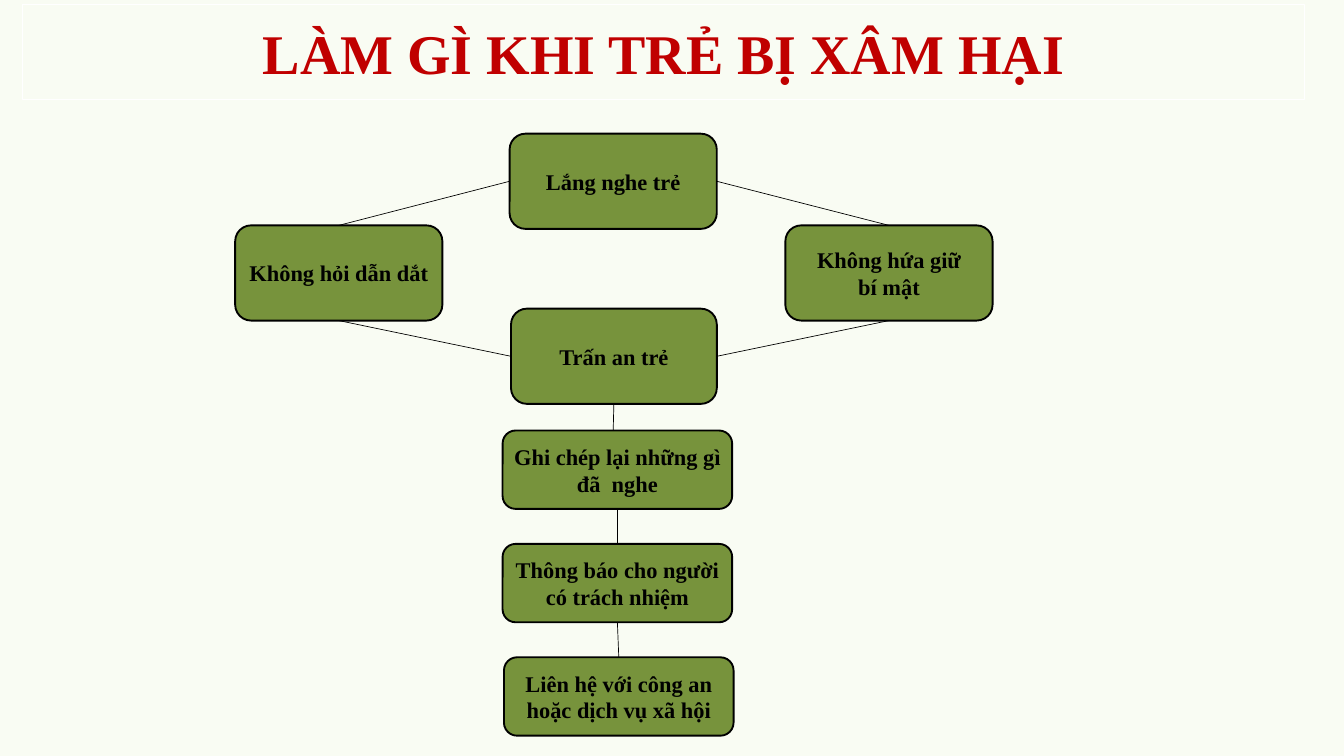
from pptx import Presentation
from pptx.dml.color import RGBColor
from pptx.enum.shapes import MSO_CONNECTOR as Connector, MSO_SHAPE as Shape
from pptx.enum.text import MSO_ANCHOR as Anchor, PP_ALIGN as Align
from pptx.oxml.ns import qn
from pptx.util import Pt
from lxml.etree import SubElement

PX = 9525
FONT = "Times New Roman"
CREAM = RGBColor(0xF9, 0xFC, 0xF3)
GREEN = RGBColor(0x77, 0x93, 0x3C)
RED = RGBColor(0xC0, 0x00, 0x00)
BLACK = RGBColor(0, 0, 0)
WHITE = RGBColor(0xFF, 0xFF, 0xFF)
TOP, LEFT, BOTTOM, RIGHT = range(4)


def add_box(slide, kind, box, text, size, color, fill, line, weight):
    """Add an outlined shape with centred bold text."""
    shape = slide.shapes.add_shape(kind, *(value * PX for value in box))
    shape.shadow.inherit = False
    if fill is None:
        shape.fill.background()
    else:
        shape.fill.solid()
        shape.fill.fore_color.rgb = fill
    shape.line.color.rgb = line
    shape.line.width = Pt(weight)
    frame = shape.text_frame
    frame.word_wrap = True
    frame.vertical_anchor = Anchor.MIDDLE
    frame.text = text
    for paragraph in frame.paragraphs:
        paragraph.alignment = Align.CENTER
        for run in paragraph.runs:
            run.font.name = FONT
            run.font.size = Pt(size)
            run.font.bold = True
            run.font.color.rgb = color
    return shape


def add_step(slide, box, text):
    """Add one green rounded step."""
    return add_box(slide, Shape.ROUNDED_RECTANGLE, box, text, 24, BLACK, GREEN, BLACK, 2)


def add_link(slide, start, start_side, end, end_side):
    """Join the sides of two steps with a thin line."""
    link = slide.shapes.add_connector(Connector.STRAIGHT, 0, 0, 0, 0)
    link.begin_connect(start, start_side)
    link.end_connect(end, end_side)
    link.line.color.rgb = BLACK
    link.line.width = Pt(0.75)
    SubElement(link._element.spPr, qn("a:effectLst"))
    return link


def add_title(slide, box):
    """Add the slide heading in its white frame."""
    add_box(slide, Shape.RECTANGLE, box, "LÀM GÌ KHI TRẺ BỊ XÂM HẠI", 60, RED, None, WHITE, 0.75)


def add_diamond(slide, left, top):
    """Add the ring of four linked steps and return the lowest one."""
    width, height = 296, 136
    no_leading = add_step(slide, (left, top + 131, width, height), "Không hỏi dẫn dắt")
    reassure = add_step(slide, (left + 394, top + 250, width - 2, height), "Trấn an trẻ")
    no_secret = add_step(slide, (left + 786, top + 131, width, height), "Không hứa giữ\nbí mật")
    listen = add_step(slide, (left + 392, top, width, height), "Lắng nghe trẻ")
    add_link(slide, no_leading, TOP, listen, LEFT)
    add_link(slide, listen, RIGHT, no_secret, TOP)
    add_link(slide, no_leading, BOTTOM, reassure, LEFT)
    add_link(slide, no_secret, BOTTOM, reassure, RIGHT)
    return reassure


def add_chain(slide, left, top, previous):
    """Add the column of follow-up steps below the previous step."""
    width, height, pitch = 328, 112, 162
    record = add_step(slide, (left, top, width, height), "Ghi chép lại những gì đã  nghe")
    report = add_step(slide, (left, top + pitch, width, height), "Thông báo cho người có trách nhiệm")
    contact = add_step(slide, (left + 2, top + 2 * pitch, width, height),
                       "Liên hệ với công an hoặc dịch vụ xã hội")
    entry = add_link(slide, previous, BOTTOM, record, TOP)
    entry._element.nvCxnSpPr.cNvCxnSpPr.remove(entry._element.nvCxnSpPr.cNvCxnSpPr.endCxn)
    entry.end_x = (left + 158) * PX
    add_link(slide, record, BOTTOM, report, TOP)
    add_link(slide, report, BOTTOM, contact, TOP)


def main():
    """Build and save the presentation."""
    presentation = Presentation()
    presentation.slide_width = 1920 * PX
    presentation.slide_height = 1080 * PX
    slide = presentation.slides.add_slide(presentation.slide_layouts[6])
    slide.background.fill.solid()
    slide.background.fill.fore_color.rgb = CREAM
    add_title(slide, (32, 6, 1832, 136))
    reassure = add_diamond(slide, 336, 191)
    add_chain(slide, 718, 615, reassure)
    presentation.save("out.pptx")


if __name__ == "__main__":
    main()
